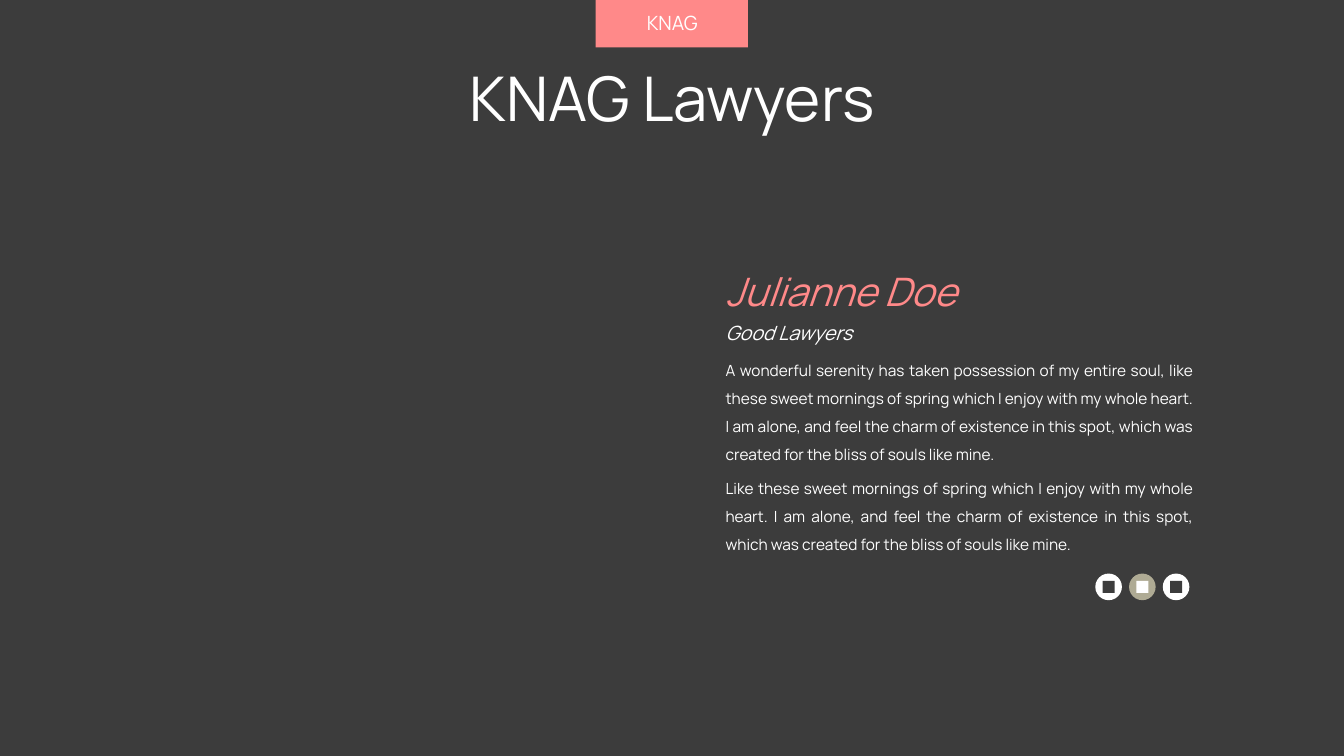
"""Build the lawyer profile slide."""
from pptx import Presentation
from pptx import util as u
from pptx.dml import color
from pptx.enum import shapes, text

deck = Presentation()
deck.slide_width, deck.slide_height = u.Inches(13.33), u.Inches(7.5)
col, row = deck.slide_width / 100, deck.slide_height / 100
page = deck.slides.add_slide(deck.slide_layouts[6])

WHITE, DARK, PINK, SAND = "FFFFFF", "3C3C3C", "FF8989", "AFAB94"
RECT, OVAL = shapes.MSO_SHAPE.RECTANGLE, shapes.MSO_SHAPE.OVAL
LEFT, MID, FULL = text.PP_ALIGN.LEFT, text.PP_ALIGN.CENTER, text.PP_ALIGN.JUSTIFY
TOP, HALF = text.MSO_ANCHOR.TOP, text.MSO_ANCHOR.MIDDLE
GROW, NONE = text.MSO_AUTO_SIZE.SHAPE_TO_FIT_TEXT, text.MSO_AUTO_SIZE.NONE


def paint(fill, tone):
    fill.solid()
    fill.fore_color.rgb = color.RGBColor.from_string(tone)


def draw(kind, x, y, wide, high, tone):
    item = page.shapes.add_shape(kind, *map(int, (x * col, y * row, wide * col, high * row)))
    item.shadow.inherit = False
    item.line.fill.background()
    paint(item.fill, tone)


paint(page.background.fill, DARK)
draw(RECT, 44.33, 0, 11.33, 6.27, PINK)

edge, wide = 53.25, 36.3
first = ("A wonderful serenity has taken possession of my entire soul, like these sweet "
         "mornings of spring which I enjoy with my whole heart. I am alone, and feel the "
         "charm of existence in this spot, which was created for the bliss of souls like mine.")
second = ("Like these sweet mornings of spring which I enjoy with my whole heart. I am alone, "
          "and feel the charm of existence in this spot, which was created for the bliss of "
          "souls like mine.")
words = [
    ("KNAG", 42.83, 0.8, 14.4, 4.53, 14, WHITE, False, MID, 1, TOP, GROW),
    ("KNAG Lawyers", 6.9, 5.73, 86.25, 15.47, 44, WHITE, False, MID, 0.9, HALF, NONE),
    ("Julianne Doe", edge, 34.67, 32.78, 7.6, 28, PINK, True, LEFT, 1, HALF, GROW),
    ("Good Lawyers", edge, 41.73, 23.18, 4.53, 14, WHITE, True, LEFT, 1, HALF, GROW),
    (first, edge, 46, wide, 15.87, 11, WHITE, False, FULL, 1.5, HALF, GROW),
    (second, edge, 61.6, wide, 12.13, 11, WHITE, False, FULL, 1.5, HALF, GROW),
]
for copy, x, y, w, h, size, tone, slant, align, lead, anchor, fit in words:
    box = page.shapes.add_textbox(*map(int, (x * col, y * row, w * col, h * row)))
    frame = box.text_frame
    frame.text = copy
    frame.word_wrap = True
    frame.auto_size = fit
    frame.vertical_anchor = anchor
    para = frame.paragraphs[0]
    para.alignment, para.line_spacing = align, lead
    font = para.runs[0].font
    font.name, font.size, font.italic = "Manrope", u.Pt(size), slant
    paint(font.fill, tone)

dot_w, dot_h, mark_w, mark_h = 1.98, 3.52, 0.9, 1.6
for i, (disc, mark) in enumerate([(WHITE, DARK), (SAND, WHITE), (WHITE, DARK)]):
    x, y = 81.5 + 2.51 * i, 75.87
    draw(OVAL, x, y, dot_w, dot_h, disc)
    draw(RECT, x + (dot_w - mark_w) / 2, y + (dot_h - mark_h) / 2, mark_w, mark_h, mark)

deck.save("out.pptx")
